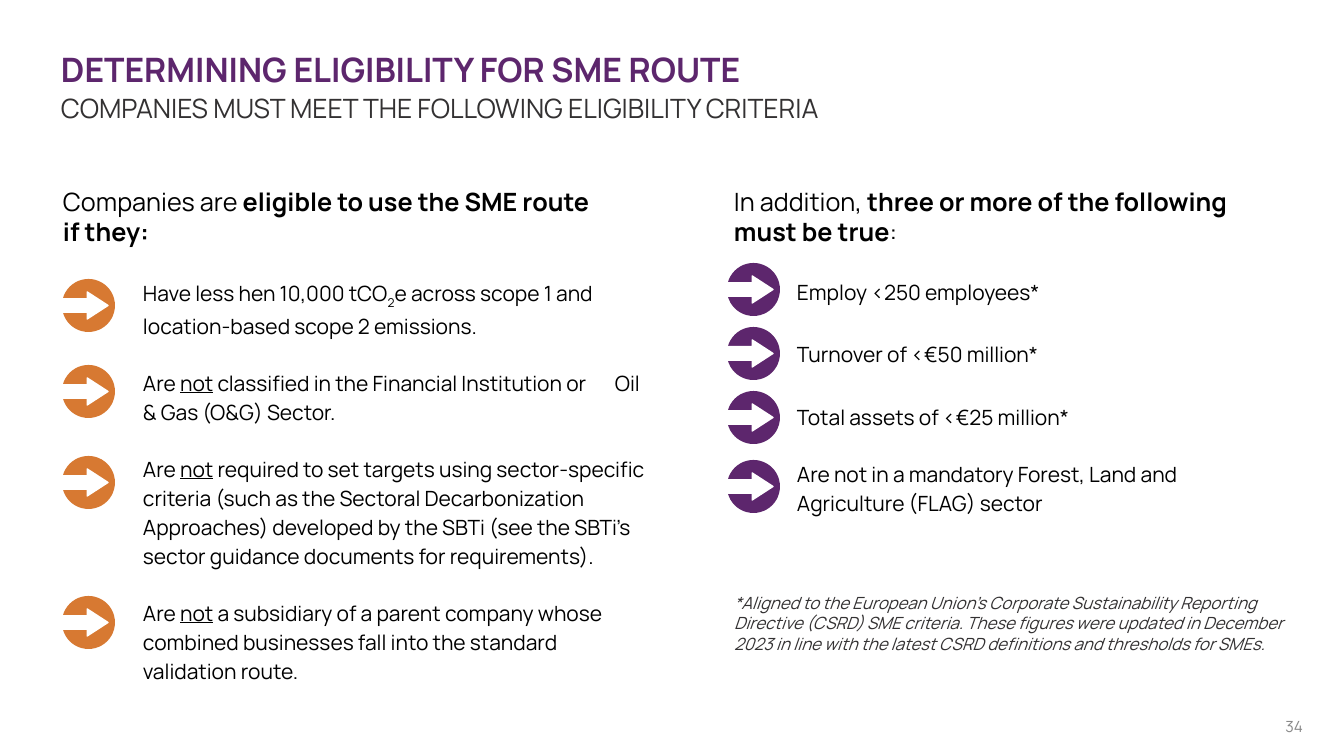
from pptx import Presentation
from pptx.dml.color import RGBColor
from pptx.enum.shapes import MSO_SHAPE as Shape
from pptx.enum.text import MSO_ANCHOR as Anchor, PP_ALIGN as Align
from pptx.util import Emu, Pt

SCALE = 914400 / 100.8
FONT = "Manrope"
PURPLE, ORANGE, WHITE = "5D266D", "D77932", "FFFFFF"
BLACK, CHARCOAL, GREY = "000000", "333132", "888888"

BOLD = {"bold": True}
LINE = {"underline": True}
SUB = {"baseline": "-25000"}
WIDE = {"spc": "1700"}
XML_LOOKS = ("baseline", "spc")
BREAK = "\n"

HEAD = {"size": 18}
LEFT = {"size": 15, "indent": 80, "line_spacing": 1.15, "space_before": 20}
LEFT_FIRST = LEFT | {"space_before": 21.5}
RIGHT = LEFT | {"indent": 63, "space_before": 24}
RIGHT_FIRST = RIGHT | {"space_before": 20.8}
RIGHT_LAST = RIGHT | {"space_before": 20}

eligible = [
    (HEAD, [("Companies are ", {}), ("eligible to use the SME route", BOLD)]),
    (HEAD, [("if they:", BOLD)]),
    (LEFT_FIRST, [("Have less hen 10,000 tCO", {}), ("2", SUB),
                  ("e across scope 1 and location-based scope 2 emissions.", {})]),
    (LEFT, [("Are ", {}), ("not", LINE),
            (" classified in the Financial Institution or", {}), (" ", WIDE),
            ("Oil & Gas (O&G) Sector.", {})]),
    (LEFT, [("Are ", {}), ("not", LINE),
            (" required to set targets using sector-specific criteria (such as the Sectoral "
             "Decarbonization Approaches) developed by the SBTi (see the SBTi’s sector "
             "guidance documents for requirements).", {})]),
    (LEFT, [("Are ", {}), ("not", LINE),
            (" a subsidiary of a parent company whose combined businesses fall into the "
             "standard validation route.", {})]),
]
additional = [
    (HEAD, [("In addition, ", {}), ("three or more of the following", BOLD)]),
    (HEAD, [("must be true", BOLD), (":", {})]),
    (RIGHT_FIRST, [("Employ <250 employees*", {})]),
    (RIGHT, [("Turnover of <€50 million*", {})]),
    (RIGHT, [("Total assets of <€25 million*", {})]),
    (RIGHT_LAST, [("Are not in a mandatory Forest, Land and", {}), (BREAK, {}),
                  ("Agriculture (FLAG) sector", {})]),
]
title = [({"size": 24, "line_spacing": 0.9},
          [("DETERMINING ELIGIBILITY FOR SME ROUTE", BOLD)])]
subtitle = [({"size": 19, "line_spacing": 0.9},
             [("COMPANIES MUST MEET THE FOLLOWING ELIGIBILITY CRITERIA", {})])]
footnote = [({"size": 12}, [(
    "*Aligned to the European Union’s Corporate Sustainability Reporting Directive (CSRD) "
    "SME criteria. These figures were updated in December 2023 in line with the latest CSRD "
    "definitions and thresholds for SMEs.", {"italic": True})])]
page_number = [({"size": 11, "alignment": Align.RIGHT}, [("34", {})])]

TEXTS = [
    (title, (54, 47, 1087, 50), (7, 4), Anchor.MIDDLE, PURPLE),
    (subtitle, (54, 92, 1002, 32), (7, 4), Anchor.TOP, CHARCOAL),
    (eligible, (53, 176, 604, 486), (10, 10), Anchor.TOP, BLACK),
    (additional, (724, 176, 604, 509), (10, 10), Anchor.TOP, BLACK),
    (footnote, (724, 583, 578, 80), (10, 10), Anchor.TOP, CHARCOAL),
    (page_number, (1011, 706, 302, 40), (10, 5), Anchor.MIDDLE, GREY),
]
MARKERS = [
    (ORANGE, 62, [279, 365, 456, 596]),
    (PURPLE, 727, [263, 327, 391, 460]),
]


def px(length):
    return Emu(round(length * SCALE))


def color(code):
    return RGBColor.from_string(code)


def apply(target, values):
    for name, value in values.items():
        setattr(target, name, value)


def add_run(paragraph, wording, look, size, ink):
    if wording == BREAK:
        paragraph.add_line_break()
        return
    run = paragraph.add_run()
    run.text = wording
    apply(run.font, {"name": FONT, "size": Pt(size)})
    run.font.color.rgb = color(ink)
    for name, value in look.items():
        if name in XML_LOOKS:
            run._r.get_or_add_rPr().set(name, value)
        else:
            setattr(run.font, name, value)


def format_paragraph(paragraph, layout):
    if "indent" in layout:
        props = paragraph._p.get_or_add_pPr()
        props.set("marL", str(px(layout["indent"])))
        props.set("indent", "0")
    if "space_before" in layout:
        paragraph.space_before = Pt(layout["space_before"])
    apply(paragraph, {name: layout[name] for name in ("line_spacing", "alignment")
                      if name in layout})


def add_text(slide, paragraphs, place, inset, anchor, ink):
    frame = slide.shapes.add_textbox(*map(px, place)).text_frame
    across, down = map(px, inset)
    apply(frame, {"word_wrap": True, "vertical_anchor": anchor,
                  "margin_left": across, "margin_right": across,
                  "margin_top": down, "margin_bottom": down})
    for index, (layout, runs) in enumerate(paragraphs):
        paragraph = frame.add_paragraph() if index else frame.paragraphs[0]
        format_paragraph(paragraph, layout)
        for wording, look in runs:
            add_run(paragraph, wording, look, layout["size"], ink)


def add_part(group, kind, place, fill):
    part = group.shapes.add_shape(kind, *map(px, place))
    part.shadow.inherit = False
    part.fill.solid()
    part.fill.fore_color.rgb = color(fill)
    return part


def add_marker(slide, left, top, fill):
    group = slide.shapes.add_group_shape()
    disc = add_part(group, Shape.OVAL, (left, top, 53, 53), fill)
    disc.line.fill.background()
    arrow = add_part(group, Shape.RIGHT_ARROW, (left - 8, top + 13, 54, 27), WHITE)
    arrow.adjustments[0], arrow.adjustments[1] = 0.5, 0.77
    arrow.line.color.rgb = color(WHITE)
    arrow.line.width = Pt(1)


def main():
    deck = Presentation()
    apply(deck, {"slide_width": px(1344), "slide_height": px(756)})
    slide = deck.slides.add_slide(deck.slide_layouts[6])
    for text in TEXTS:
        add_text(slide, *text)
    for fill, left, tops in MARKERS:
        for top in tops:
            add_marker(slide, left, top, fill)
    deck.save("out.pptx")


if __name__ == "__main__":
    main()
